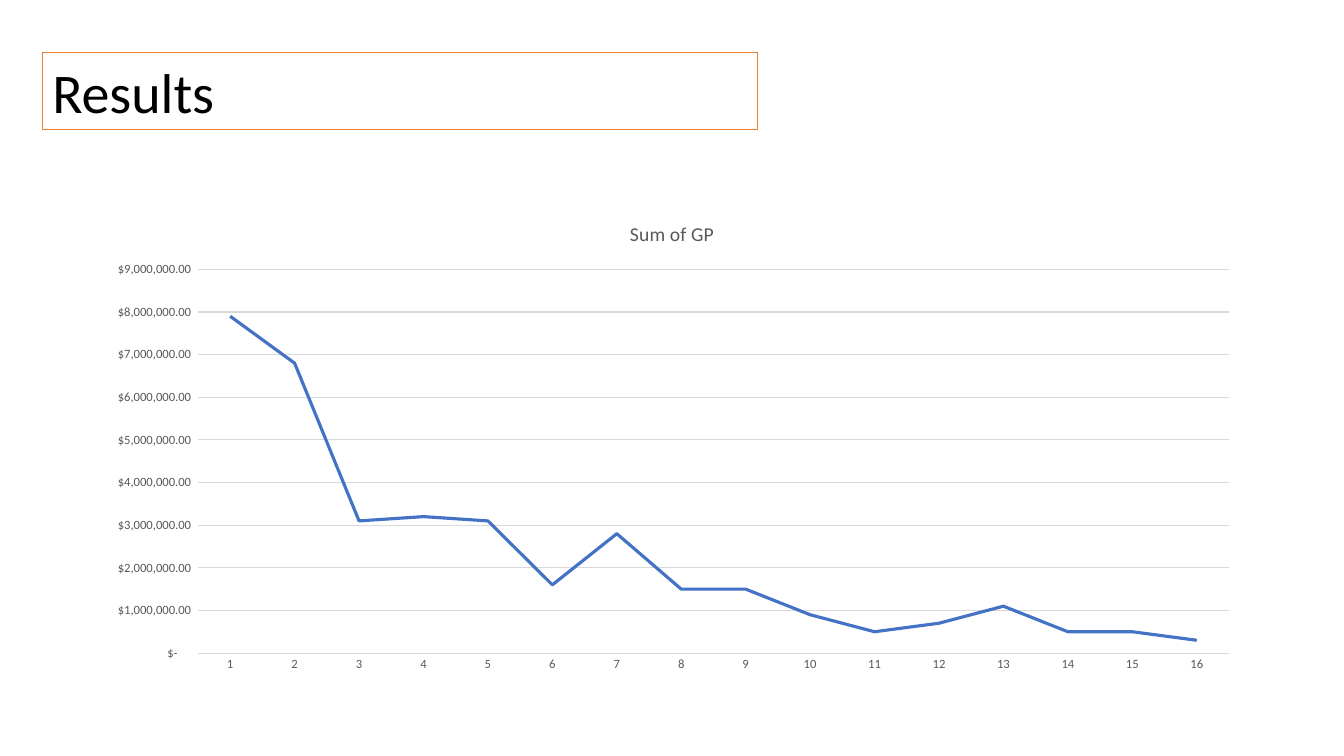
from pptx import Presentation
from pptx.chart.data import CategoryChartData
from pptx.dml.color import RGBColor
from pptx.enum.chart import XL_CHART_TYPE, XL_TICK_MARK
from pptx.enum.shapes import MSO_SHAPE
from pptx.enum.text import MSO_ANCHOR, MSO_AUTO_SIZE, PP_ALIGN
from pptx.util import Inches, Pt

LINE_CHART = XL_CHART_TYPE.LINE
NO_TICK = XL_TICK_MARK.NONE
RECTANGLE = MSO_SHAPE.RECTANGLE
TOP = MSO_ANCHOR.TOP
GROW = MSO_AUTO_SIZE.SHAPE_TO_FIT_TEXT
LEFT = PP_ALIGN.LEFT

FONT = "Calibri"
COLORS = {
    "text": "000000",
    "label": "595959",
    "grid": "D9D9D9",
    "profit": "4472C4",
    "frame": "ED7D31",
}
ACCOUNTING = r'_("$"* #,##0.00_);_("$"* \(#,##0.00\);_("$"* "-"??_);_(@_)'
MEASURE = "Sum of GP"
PROFITS_IN_MILLIONS = [7.9, 6.8, 3.1, 3.2, 3.1, 1.6, 2.8, 1.5,
                       1.5, 0.9, 0.5, 0.7, 1.1, 0.5, 0.5, 0.3]


def style_font(font, size, color):
    font.name = FONT
    font.size = Pt(size)
    font.bold = False
    font.color.rgb = RGBColor.from_string(COLORS[color])


def style_line(line, width, color):
    line.color.rgb = RGBColor.from_string(COLORS[color])
    line.width = Pt(width)


def style_axis(axis):
    axis.major_tick_mark = NO_TICK
    axis.minor_tick_mark = NO_TICK
    style_font(axis.tick_labels.font, 9, "label")


def add_heading(slide, text, left, top, width, height):
    heading = slide.shapes.add_shape(
        RECTANGLE, Inches(left), Inches(top), Inches(width), Inches(height))
    heading.shadow.inherit = False
    heading.fill.background()
    style_line(heading.line, 0.75, "frame")

    frame = heading.text_frame
    frame.word_wrap = True
    frame.auto_size = GROW
    frame.vertical_anchor = TOP
    paragraph = frame.paragraphs[0]
    paragraph.alignment = LEFT
    run = paragraph.add_run()
    run.text = text
    style_font(run.font, 40, "text")


def add_profit_chart(slide, left, top, width, height):
    # Periods are numbered from 1
    data = CategoryChartData(number_format=ACCOUNTING)
    data.categories = [str(n + 1) for n in range(len(PROFITS_IN_MILLIONS))]
    data.add_series(MEASURE, [round(m * 1_000_000) for m in PROFITS_IN_MILLIONS])
    chart = slide.shapes.add_chart(
        LINE_CHART, Inches(left), Inches(top), Inches(width), Inches(height),
        data).chart
    style_font(chart.font, 10, "text")
    chart.has_legend = False

    # Chart title
    chart.has_title = True
    title_run = chart.chart_title.text_frame.paragraphs[0].add_run()
    title_run.text = MEASURE
    style_font(title_run.font, 14, "label")
    chart.chart_title.include_in_layout = False

    # Axes and gridlines
    period_axis, profit_axis = chart.category_axis, chart.value_axis
    style_axis(period_axis)
    style_line(period_axis.format.line, 0.75, "grid")
    style_axis(profit_axis)
    profit_axis.format.line.fill.background()
    style_line(profit_axis.major_gridlines.format.line, 0.75, "grid")
    profit_axis.tick_labels.number_format = ACCOUNTING
    profit_axis.tick_labels.number_format_is_linked = False
    profit_axis.minimum_scale = 0
    profit_axis.maximum_scale = 9_000_000
    profit_axis.major_unit = 1_000_000

    # Profit line
    chart.plots[0].vary_by_categories = False
    profit = chart.plots[0].series[0]
    profit.smooth = False
    style_line(profit.format.line, 2.25, "profit")


def main():
    presentation = Presentation()
    presentation.slide_width = Inches(13.33)
    presentation.slide_height = Inches(7.5)
    slide = presentation.slides.add_slide(presentation.slide_layouts[6])

    add_profit_chart(slide, 0.91, 2, 11.51, 4.76)
    add_heading(slide, "Results", 0.42, 0.52, 7.09, 0.77)

    presentation.save("out.pptx")


if __name__ == "__main__":
    main()
